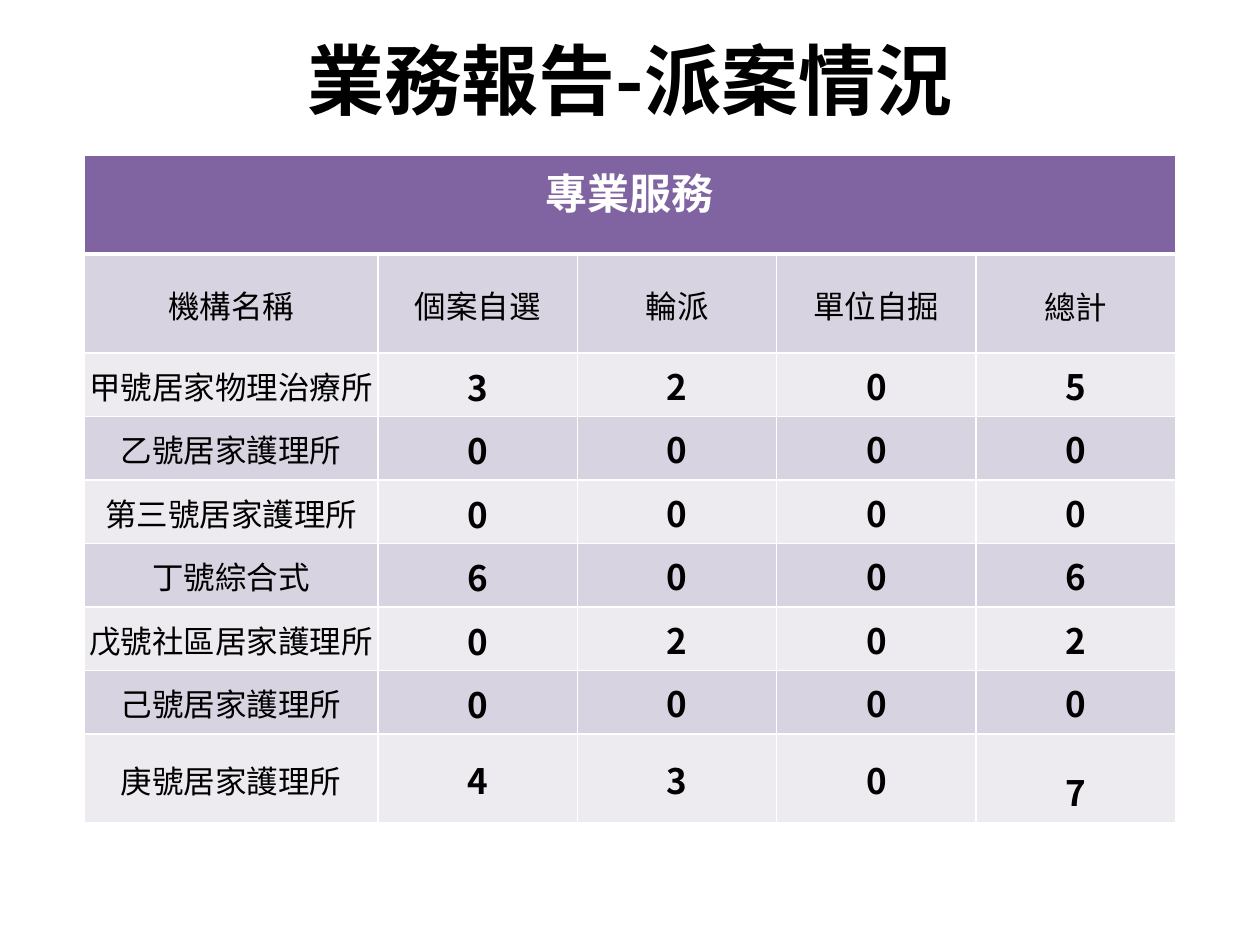
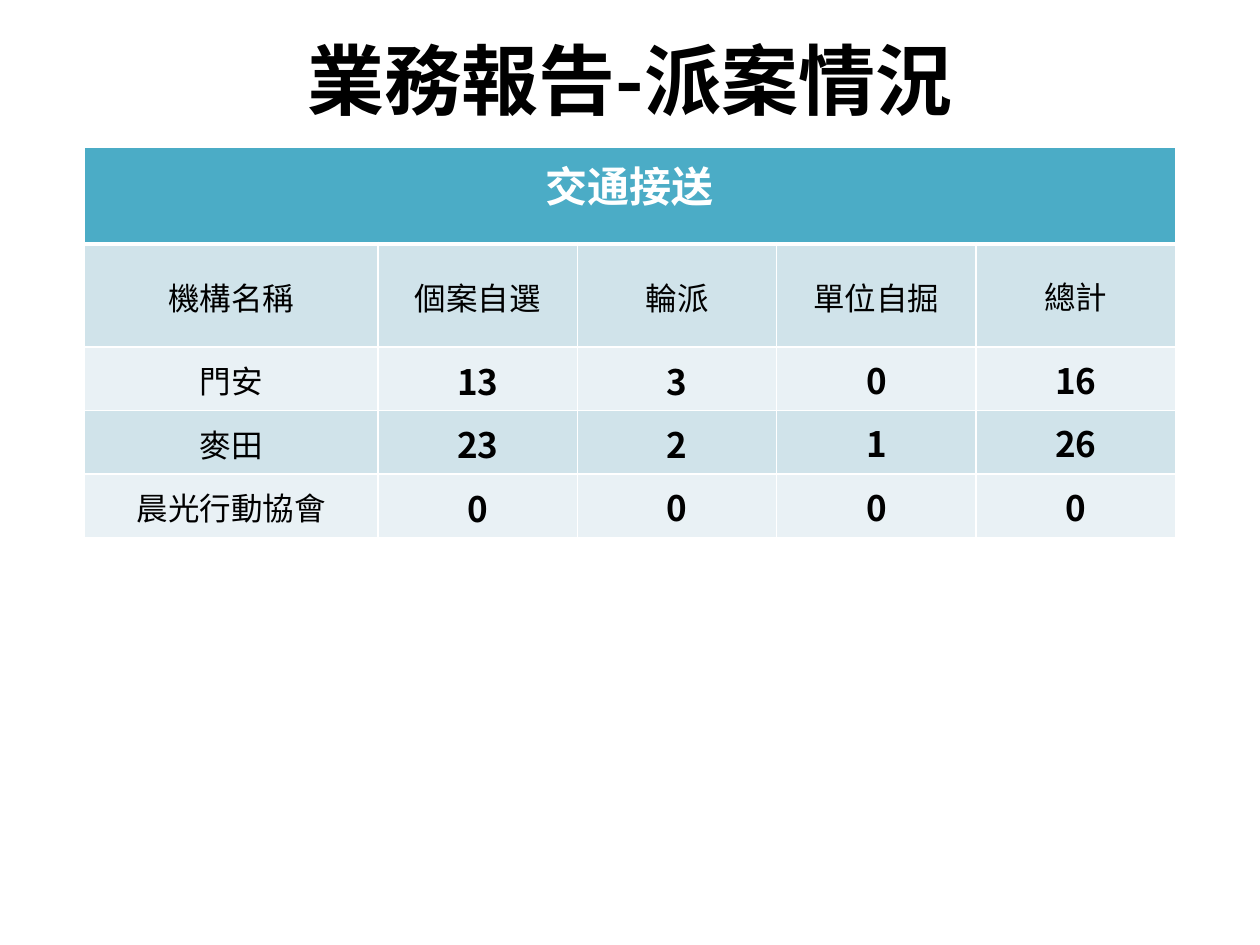
from lxml.etree import SubElement
from pptx import Presentation
from pptx.dml.color import RGBColor
from pptx.enum.text import MSO_ANCHOR as ANCHOR, PP_ALIGN as ALIGN
from pptx.oxml.ns import qn
from pptx.util import Cm, Pt

FONT = "Noto Sans CJK SC"
BLACK = RGBColor(0x00, 0x00, 0x00)
WHITE = RGBColor(0xFF, 0xFF, 0xFF)
PURPLE = RGBColor(0x80, 0x64, 0xA2)
PURPLE_MID = RGBColor(0xD8, 0xD3, 0xE0)
PURPLE_PALE = RGBColor(0xED, 0xEA, 0xF0)
TEAL = RGBColor(0x4B, 0xAC, 0xC6)
TEAL_MID = RGBColor(0xD0, 0xE3, 0xEA)
TEAL_PALE = RGBColor(0xE9, 0xF1, 0xF5)

TITLE = "業務報告-派案情況"
COLUMNS = ["機構名稱", "個案自選", "輪派", "單位自掘", "總計"]
COL_WIDTHS = [5.92, 4.02, 4.02, 4.02, 4.02]
ROW_HEIGHT = 1.28

SECTIONS = [
    {
        "name": "專業服務",
        "colors": (PURPLE, PURPLE_MID, PURPLE_PALE),
        "top": 3.12,
        "heights": [2.0, 2.0] + [ROW_HEIGHT] * 6 + [1.78],
        "rows": [
            (["甲號居家物理治療所", 3, 2, 0, 5], 2),
            (["乙號居家護理所", 0, 0, 0, 0], 2),
            (["第三號居家護理所", 0, 0, 0, 0], 2),
            (["丁號綜合式", 6, 0, 0, 6], 2),
            (["戊號社區居家護理所", 0, 2, 0, 2], 2),
            (["己號居家護理所", 0, 0, 0, 0], 2),
            (["庚號居家護理所", 4, 3, 0, 7], 4),
        ],
    },
    {
        "name": "交通接送",
        "colors": (TEAL, TEAL_MID, TEAL_PALE),
        "top": 2.97,
        "heights": [1.95, 2.08] + [ROW_HEIGHT] * 3,
        "rows": [
            (["門安", 13, 3, 0, 16], 3),
            (["麥田", 23, 2, 1, 26], 3),
            (["晨光行動協會", 0, 0, 0, 0], 2),
        ],
    },
]


def add_run(p, text, size, color, bold):
    p.alignment = ALIGN.CENTER
    r = p.add_run()
    r.text = text
    r.font.size = Pt(size)
    r.font.bold = bold
    r.font.color.rgb = color
    r.font.name = FONT
    SubElement(r.font._element, qn("a:ea"), typeface=FONT)


def style_cell(cell, fill, top=1, bottom=1):
    tcPr = cell._tc.get_or_add_tcPr()
    for side, width in (("L", 1), ("R", 1), ("T", top), ("B", bottom)):
        ln = SubElement(tcPr, qn(f"a:ln{side}"), w=str(Pt(width)))
        color = SubElement(ln, qn("a:solidFill"))
        SubElement(color, qn("a:srgbClr"), val=str(WHITE))
    cell.fill.solid()
    cell.fill.fore_color.rgb = fill


prs = Presentation()
prs.slide_width = Cm(25.4)
prs.slide_height = Cm(19.05)

for section in SECTIONS:
    s = prs.slides.add_slide(prs.slide_layouts[5])
    title = s.shapes.title
    title.left, title.top = Cm(1.27), Cm(0)
    title.width, title.height = Cm(22.86), Cm(3.18)
    tf = title.text_frame
    tf.vertical_anchor = ANCHOR.MIDDLE
    add_run(tf.paragraphs[0], TITLE, 44, BLACK, True)

    heights = section["heights"]
    banner, mid, pale = section["colors"]
    table = s.shapes.add_table(
        len(heights), len(COLUMNS), Cm(1.7), Cm(section["top"]),
        Cm(sum(COL_WIDTHS)), Cm(sum(heights))).table
    for column, width in zip(table.columns, COL_WIDTHS):
        column.width = Cm(width)
    for row, height in zip(table.rows, heights):
        row.height = Cm(height)

    for cell in table.rows[0].cells:
        style_cell(cell, banner, bottom=3)
    head = table.cell(0, 0)
    head.merge(table.cell(0, len(COLUMNS) - 1))
    add_run(head.text_frame.paragraphs[0], section["name"], 24, WHITE, True)

    for i, (values, tight) in enumerate([(COLUMNS, 4)] + section["rows"], 1):
        for j, value in enumerate(values):
            cell = table.cell(i, j)
            style_cell(cell, mid if i % 2 else pale, top=3 if i == 1 else 1)
            p = cell.text_frame.paragraphs[0]
            if j < tight:
                cell.vertical_anchor = ANCHOR.MIDDLE
                cell.margin_left = cell.margin_right = cell.margin_top = Cm(0.03)
                cell.margin_bottom = Cm(0)
            elif tight == 4:
                p.line_spacing = 1.5
            is_number = i > 1 and j > 0
            add_run(p, str(value), 20 if is_number else 18, BLACK, is_number)

prs.save("out.pptx")
